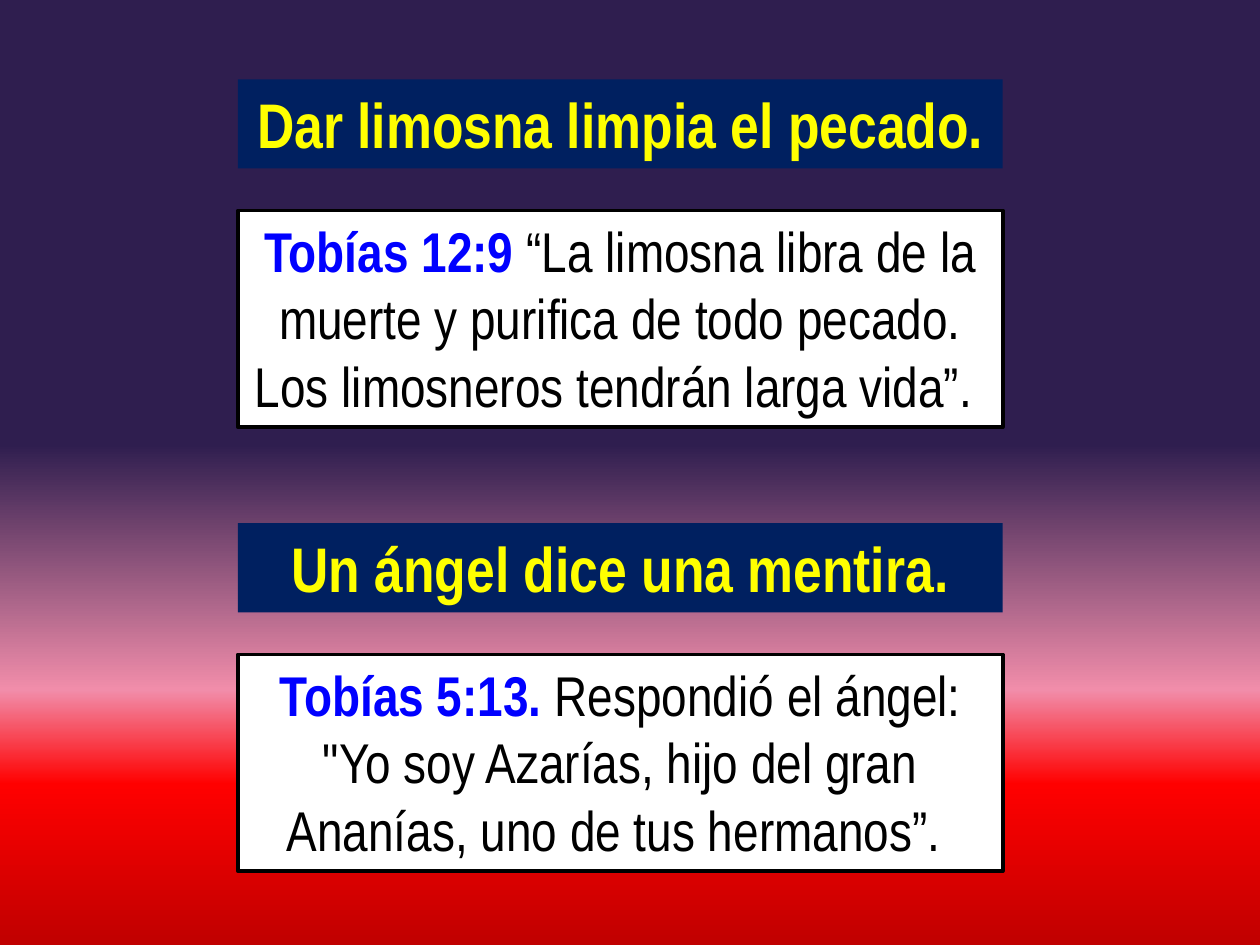
"""Build a slide with two headings, each above a quotation from Tobías."""
from copy import deepcopy

from pptx import Presentation
from pptx.dml.color import RGBColor
from pptx.enum.shapes import MSO_SHAPE
from pptx.enum.text import MSO_ANCHOR, MSO_AUTO_SIZE, PP_ALIGN
from pptx.oxml.ns import qn
from pptx.util import Pt

RECTANGLE = MSO_SHAPE.RECTANGLE
CENTER = PP_ALIGN.CENTER
TOP = MSO_ANCHOR.TOP
GROW = MSO_AUTO_SIZE.SHAPE_TO_FIT_TEXT

PURPLE = RGBColor(0x2F, 0x1E, 0x4F)
PINK = RGBColor(0xF1, 0x8D, 0xAA)
RED = RGBColor(0xFF, 0x00, 0x00)
DARK_RED = RGBColor(0xC0, 0x00, 0x00)
NAVY = RGBColor(0x00, 0x20, 0x60)
YELLOW = RGBColor(0xFF, 0xFF, 0x00)
BLUE = RGBColor(0x00, 0x00, 0xFF)
WHITE = RGBColor(0xFF, 0xFF, 0xFF)
BLACK = RGBColor(0x00, 0x00, 0x00)

FONT = "Arial Narrow"
LEFT, WIDTH = 136, 437
HEADING_HEIGHT, QUOTE_HEIGHT = 51, 123.8
QUOTE_OFFSET = 75

BACKGROUND_STOPS = [(0, PURPLE), (0.47, PURPLE), (0.73, PINK), (0.83, RED), (1, DARK_RED)]
SECTIONS = [
    (45.3, "Dar limosna limpia el pecado.", "Tobías 12:9 ",
     "“La limosna libra de la muerte y purifica de todo pecado. "
     "Los limosneros tendrán larga vida”. "),
    (299, "Un ángel dice una mentira.", "Tobías 5:13. ",
     "Respondió el ángel: \"Yo soy Azarías, hijo del gran Ananías, "
     "uno de tus hermanos”. "),
]


def add_box(slide, top, height, fill_color, size, runs):
    shape = slide.shapes.add_shape(RECTANGLE, Pt(LEFT), Pt(top), Pt(WIDTH), Pt(height))
    shape.shadow.inherit = False
    shape.fill.solid()
    shape.fill.fore_color.rgb = fill_color
    shape.line.fill.background()
    text_frame = shape.text_frame
    text_frame.word_wrap = True
    text_frame.auto_size = GROW
    text_frame.vertical_anchor = TOP
    paragraph = text_frame.paragraphs[0]
    paragraph.alignment = CENTER
    for text, color, bold in runs:
        run = paragraph.add_run()
        run.text = text
        run.font.name = FONT
        run.font.size = Pt(size)
        run.font.bold = bold
        run.font.color.rgb = color
    return shape


presentation = Presentation()
presentation.slide_width = Pt(720)
presentation.slide_height = Pt(540)
slide = presentation.slides.add_slide(presentation.slide_layouts[6])

background_fill = slide.background.fill
background_fill.gradient()
background_fill.gradient_angle = 270
stop_list = next(slide.element.iter(qn("a:gsLst")))
while len(stop_list) < len(BACKGROUND_STOPS):
    stop_list.append(deepcopy(stop_list[0]))
for stop, (position, color) in zip(background_fill.gradient_stops, BACKGROUND_STOPS):
    stop.position = position
    stop.color.rgb = color

for top, heading, reference, quote in SECTIONS:
    add_box(slide, top, HEADING_HEIGHT, NAVY, 36, [(heading, YELLOW, True)])
    quote_box = add_box(slide, top + QUOTE_OFFSET, QUOTE_HEIGHT, WHITE, 32,
                        [(reference, BLUE, True), (quote, BLACK, False)])
    quote_box.line.color.rgb = BLACK
    quote_box.line.width = Pt(2.25)

presentation.save("out.pptx")
